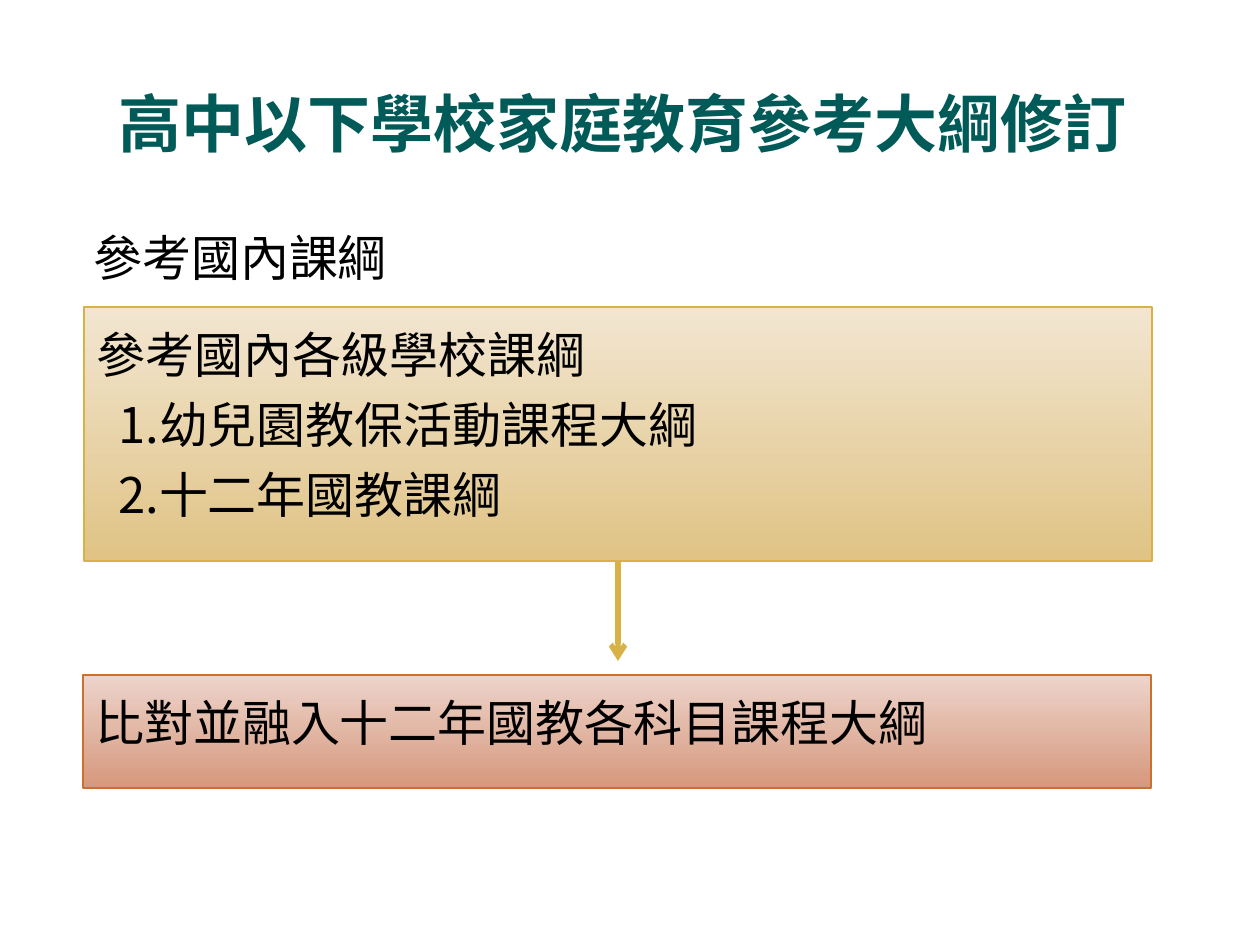
from lxml.etree import SubElement
from pptx import Presentation
from pptx.dml.color import RGBColor
from pptx.enum.lang import MSO_LANGUAGE_ID
from pptx.enum.shapes import MSO_CONNECTOR, MSO_SHAPE
from pptx.enum.text import MSO_ANCHOR, PP_ALIGN
from pptx.oxml.ns import qn
from pptx.util import Emu, Pt

SCALE = 914400 / 126
SANS = "Noto Sans CJK SC"
SERIF = "Times New Roman"
BLACK = RGBColor(0x00, 0x00, 0x00)
TEAL = RGBColor(0x00, 0x5A, 0x58)
GOLD = RGBColor(0xD9, 0xB2, 0x47)
GOLD_TOP = RGBColor(0xF2, 0xE6, 0xD1)
GOLD_LOW = RGBColor(0xE0, 0xC3, 0x85)
RUST = RGBColor(0xCC, 0x70, 0x2D)
RUST_TOP = RGBColor(0xED, 0xD4, 0xCB)
RUST_LOW = RGBColor(0xD6, 0x98, 0x7D)


def px(*nums):
    return [Emu(round(num * SCALE)) for num in nums]


def add_run(para, text, size=28, color=BLACK, face=SANS, bold=False):
    run = para.add_run()
    run.text = text
    font = run.font
    font.size = Pt(size)
    font.bold = bold
    font.color.rgb = color
    font.language_id = MSO_LANGUAGE_ID.TRADITIONAL_CHINESE
    font.name = face
    SubElement(run.font._element, qn("a:ea"), typeface=SANS)


def add_label(slide, area, text, align=PP_ALIGN.LEFT, **style):
    frame = slide.shapes.add_textbox(*px(*area)).text_frame
    frame.word_wrap = True
    para = frame.paragraphs[0]
    para.alignment = align
    add_run(para, text, **style)


def add_panel(slide, area, colors, edge, lines):
    box = slide.shapes.add_shape(MSO_SHAPE.RECTANGLE, *px(*area))
    box.shadow.inherit = False
    box.fill.gradient()
    box.fill.gradient_angle = 270
    for stop, color, place in zip(box.fill.gradient_stops, colors, (0, 1)):
        stop.color.rgb = color
        stop.position = place
    box.line.color.rgb = edge
    box.line.width = Pt(0.75)
    frame = box.text_frame
    frame.word_wrap = True
    frame.vertical_anchor = MSO_ANCHOR.TOP
    for row, (text, indent) in enumerate(lines):
        para = frame.add_paragraph() if row else frame.paragraphs[0]
        para.alignment = PP_ALIGN.LEFT
        para.line_spacing = Pt(40)
        para._p.get_or_add_pPr().set("marL", str(px(indent)[0]))
        add_run(para, text)
    return box


def add_arrow(slide, box, ends):
    link = slide.shapes.add_connector(MSO_CONNECTOR.STRAIGHT, *px(*ends))
    link.begin_connect(box, 2)
    link.line.color.rgb = GOLD
    link.line.width = Pt(3)
    SubElement(link.line._get_or_add_ln(), qn("a:tailEnd"), type="arrow")
    SubElement(link._element.spPr, qn("a:effectLst"))


def main():
    deck = Presentation()
    deck.slide_width, deck.slide_height = px(1260, 945)
    slide = deck.slides.add_slide(deck.slide_layouts[6])
    add_label(slide, (-15, 78, 1275, 87), "高中以下學校家庭教育參考大綱修訂",
              PP_ALIGN.CENTER, size=36, color=TEAL, face=SERIF, bold=True)
    source = add_panel(slide, (84, 307, 1068, 254), (GOLD_TOP, GOLD_LOW), GOLD, [
        ("參考國內各級學校課綱", 0),
        ("1.幼兒園教保活動課程大綱", 22),
        ("2.十二年國教課綱", 22),
    ])
    add_panel(slide, (83, 675, 1068, 113), (RUST_TOP, RUST_LOW), RUST,
              [("比對並融入十二年國教各科目課程大綱", 0)])
    add_arrow(slide, source, (618, 561, 618, 661))
    add_label(slide, (81, 221, 784, 72), "參考國內課綱")
    deck.save("out.pptx")


if __name__ == "__main__":
    main()
